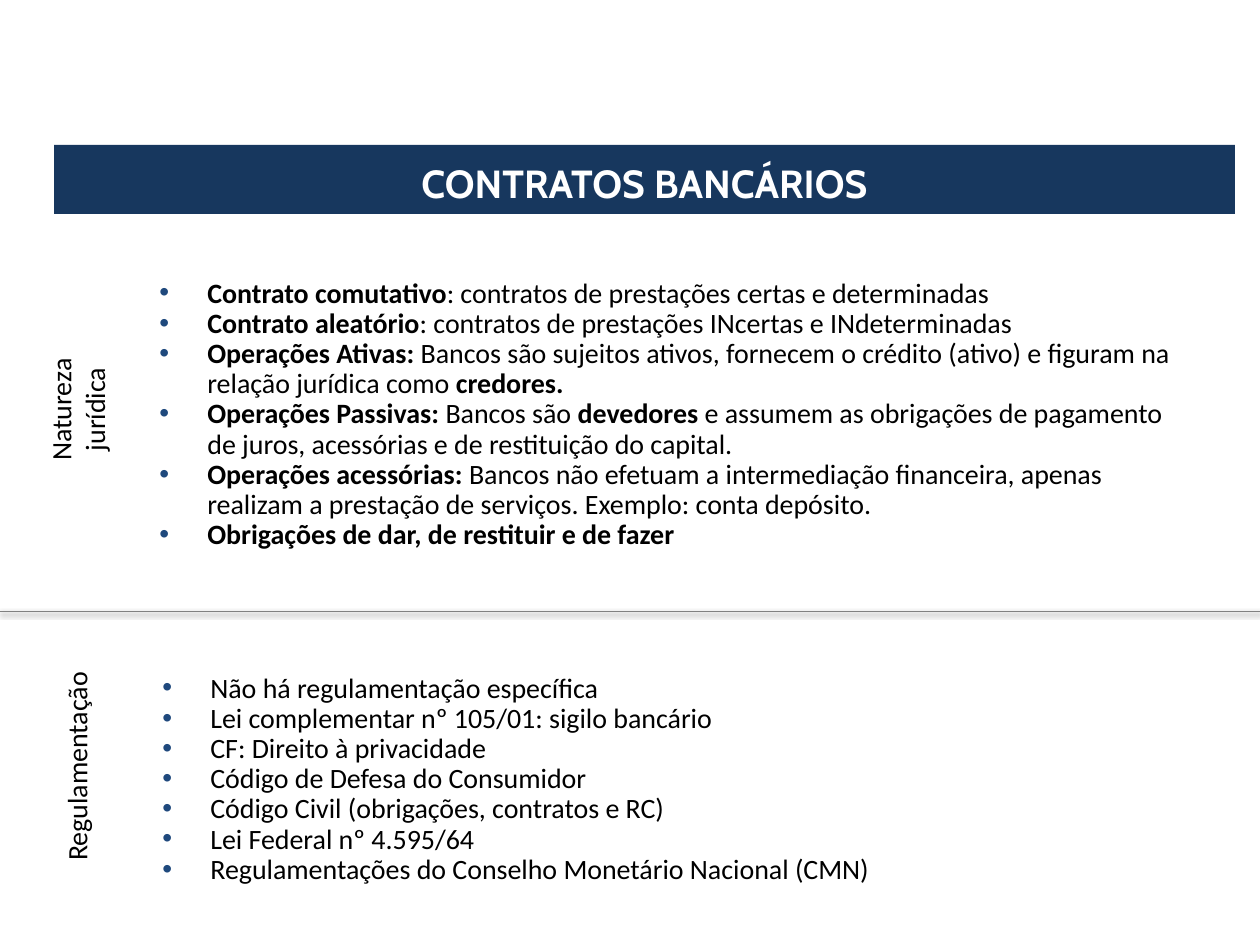
from lxml.etree import SubElement
from pptx import Presentation
from pptx.dml.color import RGBColor
from pptx.enum.shapes import MSO_CONNECTOR as CONNECTOR
from pptx.enum.text import MSO_ANCHOR as ANCHOR, MSO_AUTO_SIZE as AUTO_SIZE, PP_ALIGN as ALIGN
from pptx.oxml.ns import qn
from pptx.util import Emu, Pt

SCALE = 914400 / 126
COLORS = {"navy": "17375E", "bullet": "1F497D", "white": "FFFFFF",
          "black": "000000", "gray": "808080"}


def px(value):
    return Emu(round(value * SCALE))


def write_text(shape, lines, size=16, font="Calibri", color="black", bold=False,
               align=ALIGN.LEFT, bullets=False, small_caps=False, top=6):
    frame = shape.text_frame
    frame.word_wrap = True
    frame.auto_size = AUTO_SIZE.NONE
    frame.margin_top = px(top)
    for index, line in enumerate(lines):
        paragraph = frame.paragraphs[0] if index == 0 else frame.add_paragraph()
        paragraph.alignment = align
        if bullets:
            properties = paragraph._p.get_or_add_pPr()
            properties.set("marL", str(px(48)))
            properties.set("indent", str(px(-48)))
            bullet_color = SubElement(properties, qn("a:buClr"))
            SubElement(bullet_color, qn("a:srgbClr"), val=COLORS["bullet"])
            SubElement(properties, qn("a:buFont"), typeface="Arial")
            SubElement(properties, qn("a:buChar"), char="•")
            paragraph.line_spacing = 0.9
        for part, text in enumerate(line.split("**")):
            if not text:
                continue
            run = paragraph.add_run()
            run.text = text
            run.font.size = Pt(size)
            run.font.name = font
            run.font.bold = bold or part % 2 == 1
            run.font.color.rgb = RGBColor.from_string(COLORS[color])
            if small_caps:
                run.font._element.set("cap", "small")


presentation = Presentation()
presentation.slide_width, presentation.slide_height = px(1260), px(945)
slide = presentation.slides.add_slide(presentation.slide_layouts[5])

title = slide.shapes.title
title.left, title.top, title.width, title.height = px(54), px(145), px(1181), px(69)
title.fill.solid()
title.fill.fore_color.rgb = RGBColor.from_string(COLORS["navy"])
title.text_frame.vertical_anchor = ANCHOR.MIDDLE
write_text(title, ["contratos bancários"], size=28, font="Cabin", color="white",
           bold=True, align=ALIGN.CENTER, small_caps=True)

legal_nature = [
    "**Contrato comutativo**: contratos de prestações certas e determinadas",
    "**Contrato aleatório**: contratos de prestações INcertas e INdeterminadas",
    "**Operações Ativas: **Bancos são sujeitos ativos, fornecem o crédito (ativo) "
    "e figuram na relação jurídica como **credores.**",
    "**Operações Passivas:** Bancos são **devedores** e assumem as obrigações de "
    "pagamento de juros, acessórias e de restituição do capital.",
    "**Operações acessórias: **Bancos não efetuam a intermediação financeira, "
    "apenas realizam a prestação de serviços. Exemplo: conta depósito.",
    "**Obrigações de dar, de restituir e de fazer**",
]
regulation = [
    "Não há regulamentação específica",
    "Lei complementar nº 105/01: sigilo bancário",
    "CF: Direito à privacidade",
    "Código de Defesa do Consumidor",
    "Código Civil (obrigações, contratos e RC)",
    "Lei Federal nº 4.595/64",
    "Regulamentações do Conselho Monetário Nacional (CMN)",
]
for box, lines, top in [
    ((147, 273, 1041, 310), legal_nature, 6),
    ((150, 634, 794, 263), regulation, 40),
]:
    body = slide.shapes.add_textbox(*map(px, box))
    write_text(body, lines, bullets=True, top=top)

for box, label in [
    ((-28, 369, 212, 81), "Natureza jurídica"),
    ((-47, 743, 248, 47), "Regulamentação"),
]:
    side_label = slide.shapes.add_textbox(*map(px, box))
    side_label.rotation = 270
    write_text(side_label, [label], align=ALIGN.CENTER)

divider = slide.shapes.add_connector(CONNECTOR.STRAIGHT, 0, px(611), px(1260), px(611))
divider.line.color.rgb = RGBColor.from_string(COLORS["gray"])
divider.line.width = Pt(0.25)
effects = SubElement(divider._element.spPr, qn("a:effectLst"))
shadow = SubElement(effects, qn("a:outerShdw"), blurRad="40000", dist="20000",
                    dir="5400000", rotWithShape="0")
shadow_color = SubElement(shadow, qn("a:srgbClr"), val=COLORS["black"])
SubElement(shadow_color, qn("a:alpha"), val="38000")

presentation.save("out.pptx")
